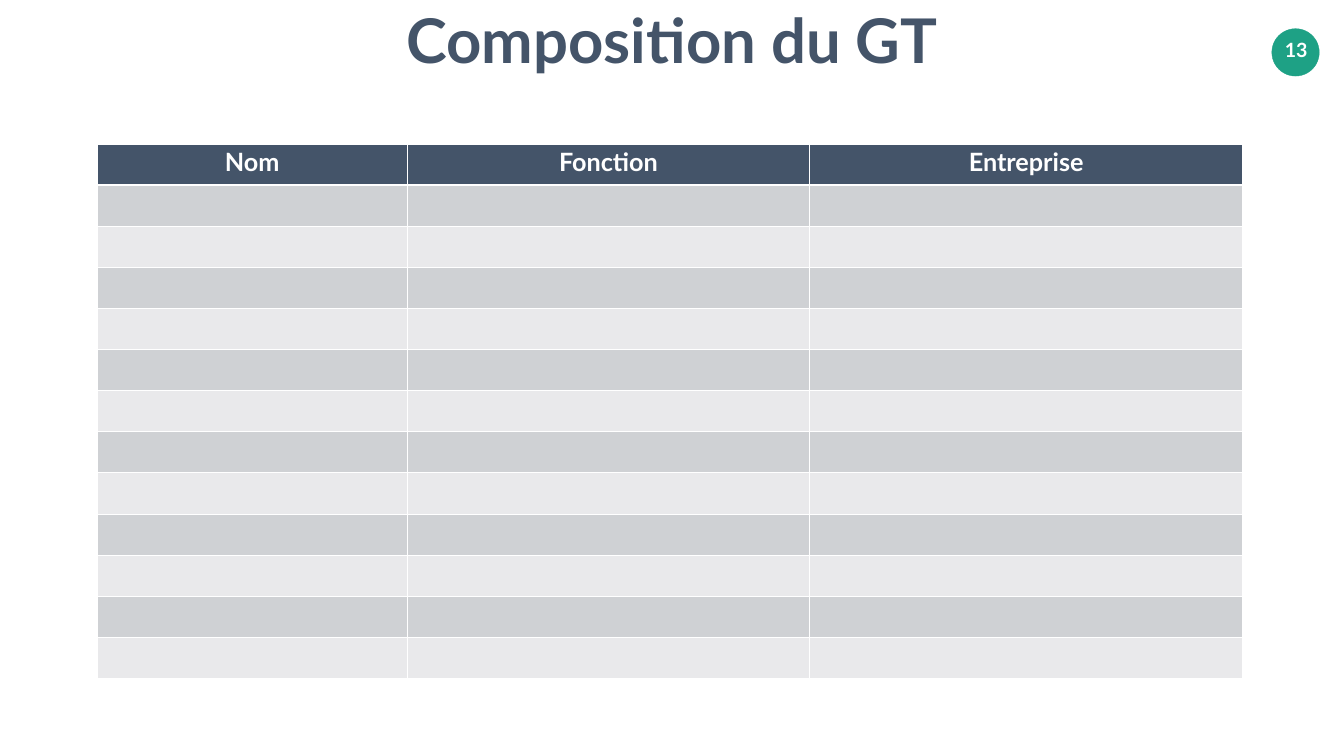
from lxml.etree import SubElement
from pptx import Presentation
from pptx.dml.color import RGBColor
from pptx.enum.shapes import MSO_SHAPE as Shape
from pptx.enum.text import MSO_AUTO_SIZE as AutoSize, PP_ALIGN as Align
from pptx.oxml.ns import qn
from pptx.util import Pt

SLATE, GREEN, WHITE = "445469", "1EA185", "FFFFFF"
BANDS = ["CFD1D4", "E9E9EB"]


def color(hex_string):
    return RGBColor.from_string(hex_string)


def write(frame, text, size, ink):
    paragraph = frame.paragraphs[0]
    paragraph.alignment = Align.CENTER
    run = paragraph.add_run()
    run.text = text
    run.font.name = "Lato"
    run.font.size = Pt(size)
    run.font.bold = True
    run.font.color.rgb = color(ink)


deck = Presentation()
deck.slide_width, deck.slide_height = Pt(1919.5), Pt(1080)
slide = deck.slides.add_slide(deck.slide_layouts[6])
shapes = slide.shapes

# Page number badge
badge = shapes.add_shape(Shape.OVAL, Pt(1816.5), Pt(41), Pt(67.7), Pt(67.7))
badge.shadow.inherit = False
badge.fill.solid()
badge.fill.fore_color.rgb = color(GREEN)
badge.line.color.rgb = color(GREEN)
badge.line.width = Pt(0.5)

page_number = shapes.add_textbox(Pt(1819.5), Pt(47.5), Pt(63.4), Pt(48)).text_frame
page_number.word_wrap = False
page_number.auto_size = AutoSize.SHAPE_TO_FIT_TEXT
page_number.margin_left = page_number.margin_right = Pt(14.4)
page_number.margin_top = page_number.margin_bottom = Pt(7.2)
write(page_number, "13", 28, WHITE)

# Title
title = shapes.add_textbox(Pt(0), Pt(-0.7), Pt(1919.5), Pt(113.8)).text_frame
title.word_wrap = True
title.auto_size = AutoSize.SHAPE_TO_FIT_TEXT
write(title, "Composition du GT", 88, SLATE)

# Members table: one header row and twelve empty banded rows
headings = ["Nom", "Fonction", "Entreprise"]
widths = [443.5, 574.5, 618.7]
row_count, row_height = 13, 58.7
members = shapes.add_table(row_count, len(headings), Pt(138.3), Pt(206),
                           Pt(sum(widths)), Pt(row_count * row_height)).table
for column, width in zip(members.columns, widths):
    column.width = Pt(width)

for r, row in enumerate(members.rows):
    row.height = Pt(row_height)
    for c, cell in enumerate(row.cells):
        # White rules, thicker under the header
        borders = {"lnL": 1, "lnR": 1, "lnT": 3 if r == 1 else 1, "lnB": 3 if r == 0 else 1}
        properties = cell._tc.get_or_add_tcPr()
        for side, weight in borders.items():
            rule = SubElement(properties, qn(f"a:{side}"), w=str(Pt(weight)))
            SubElement(SubElement(rule, qn("a:solidFill")), qn("a:srgbClr"), val=WHITE)
        cell.fill.solid()
        cell.fill.fore_color.rgb = color(SLATE if r == 0 else BANDS[(r - 1) % 2])
        if r == 0:
            write(cell.text_frame, headings[c], 36, WHITE)

deck.save("out.pptx")
